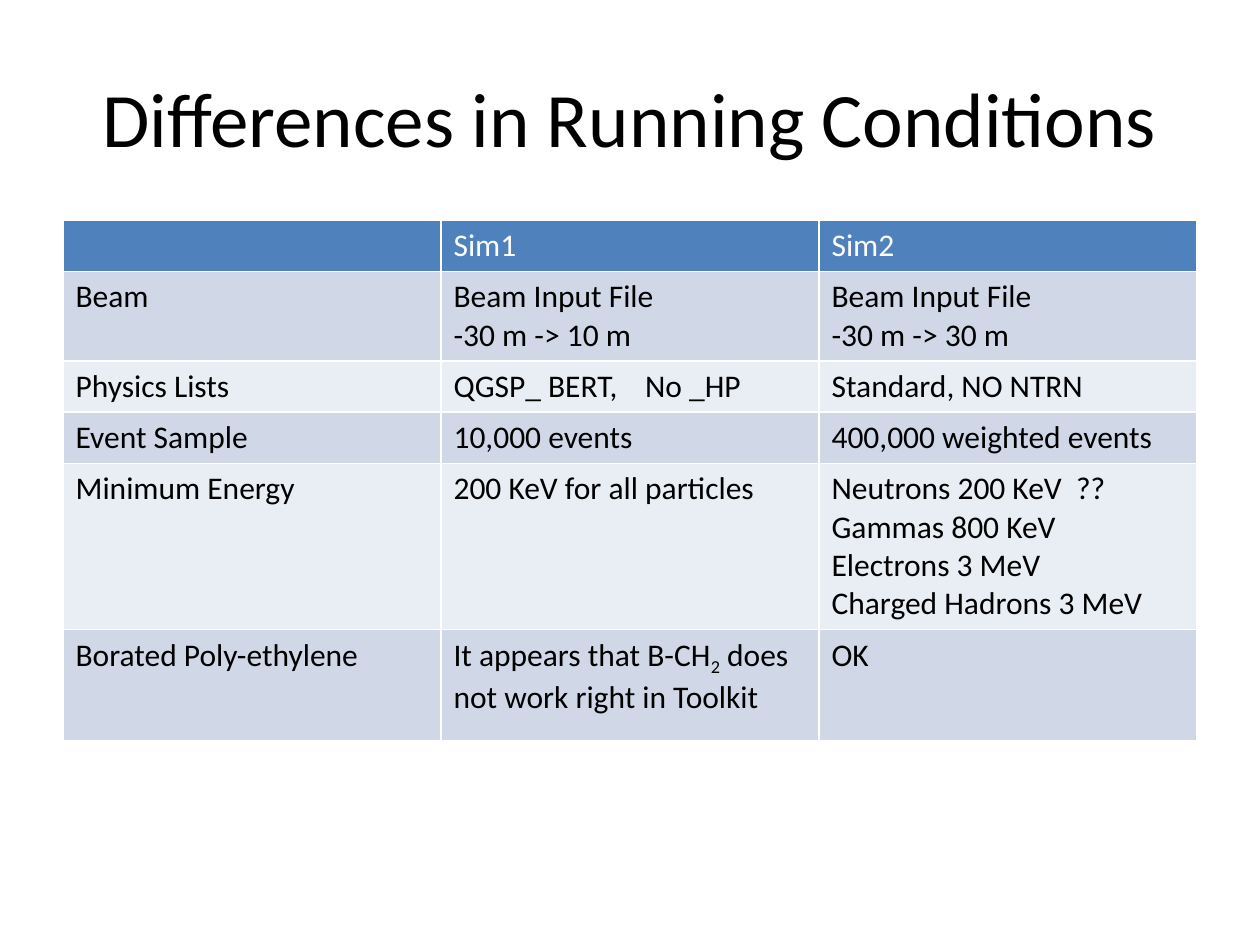
from dataclasses import dataclass

import pptx
import pptx.dml.color
import pptx.enum.text
import pptx.util
from lxml import etree
from pptx.oxml.ns import qn

Inches = pptx.util.Inches
Pt = pptx.util.Pt

FONT = "Calibri"
COLORS = {
    "text": "000000",
    "header_text": "FFFFFF",
    "header": "4F81BD",
    "odd_row": "D0D8E8",
    "even_row": "E9EDF4",
}
COLUMN_WIDTH = 3
TAB_STOP = 1.52


@dataclass(frozen=True)
class Span:
    text: str
    baseline: int = 0


@dataclass(frozen=True)
class Row:
    """Each cell is a list of paragraphs, and each paragraph a list of spans."""
    height: float
    cells: list[list[list[Span]]]


def lines(*texts: str) -> list[list[Span]]:
    return [[Span(text)] for text in texts]


ROWS = [
    Row(0.37, [[], lines("Sim1"), lines("Sim2")]),
    Row(0.64, [
        lines("Beam"),
        lines("Beam Input File", "-30 m -> 10 m"),
        lines("Beam Input File", "-30 m -> 30 m"),
    ]),
    Row(0.37, [
        lines("Physics Lists"),
        lines("QGSP_ BERT,\tNo _HP"),
        lines("Standard, NO NTRN"),
    ]),
    Row(0.37, [
        lines("Event Sample"),
        lines("10,000 events"),
        lines("400,000 weighted events"),
    ]),
    Row(1.19, [
        lines("Minimum Energy"),
        lines("200 KeV for all particles"),
        lines("Neutrons 200 KeV  ??", "Gammas 800 KeV",
              "Electrons 3 MeV", "Charged Hadrons 3 MeV"),
    ]),
    Row(0.88, [
        lines("Borated Poly-ethylene"),
        [[Span("It appears that B-CH"), Span("2", -25),
          Span(" does not work right in Toolkit")]],
        lines("OK"),
    ]),
]


def color(name: str) -> pptx.dml.color.RGBColor:
    return pptx.dml.color.RGBColor.from_string(COLORS[name])


def format_paragraph(para, size: int, color_name: str) -> None:
    para.font.name = FONT
    para.font.size = Pt(size)
    para.font.bold = False
    para.font.color.rgb = color(color_name)


def add_tab_stop(para, position: float) -> None:
    properties = para._p.get_or_add_pPr()
    stops = etree.Element(qn("a:tabLst"))
    etree.SubElement(stops, qn("a:tab"), pos=str(Inches(position)), algn="l")
    default_font = properties.find(qn("a:defRPr"))
    if default_font is None:
        properties.append(stops)
    else:
        default_font.addprevious(stops)


def fill_cell(cell, paragraphs: list[list[Span]], fill: str, text_color: str) -> None:
    cell.fill.solid()
    cell.fill.fore_color.rgb = color(fill)
    frame = cell.text_frame
    format_paragraph(frame.paragraphs[0], 18, text_color)
    for index, spans in enumerate(paragraphs):
        para = frame.add_paragraph() if index else frame.paragraphs[0]
        format_paragraph(para, 18, text_color)
        for span in spans:
            run = para.add_run()
            run.text = span.text
            if span.baseline:
                run._r.get_or_add_rPr().set("baseline", str(span.baseline * 1000))
            if "\t" in span.text:
                add_tab_stop(para, TAB_STOP)


def add_comparison_table(page, rows: list[Row]) -> None:
    column_count = len(rows[0].cells)
    table = page.shapes.add_table(
        len(rows), column_count, Inches(0.5), Inches(1.75),
        Inches(COLUMN_WIDTH * column_count), Inches(sum(row.height for row in rows)),
    ).table
    for column in table.columns:
        column.width = Inches(COLUMN_WIDTH)
    for index, row in enumerate(rows):
        table.rows[index].height = Inches(row.height)
        fill = "header" if index == 0 else "odd_row" if index % 2 else "even_row"
        text_color = "text" if index else "header_text"
        for cell, paragraphs in zip(table.rows[index].cells, row.cells):
            fill_cell(cell, paragraphs, fill, text_color)


def add_title(page, text: str) -> None:
    title = page.shapes.title
    title.left, title.top = Inches(0.5), Inches(0.3)
    title.width, title.height = Inches(9), Inches(1.25)
    title.text_frame.text = text
    title.text_frame.vertical_anchor = pptx.enum.text.MSO_ANCHOR.MIDDLE
    para = title.text_frame.paragraphs[0]
    para.alignment = pptx.enum.text.PP_ALIGN.CENTER
    format_paragraph(para, 44, "text")


def main() -> None:
    deck = pptx.Presentation()
    deck.slide_width, deck.slide_height = Inches(10), Inches(7.5)
    page = deck.slides.add_slide(deck.slide_layouts.get_by_name("Title Only"))
    add_title(page, "Differences in Running Conditions")
    add_comparison_table(page, ROWS)
    deck.save("out.pptx")


if __name__ == "__main__":
    main()
